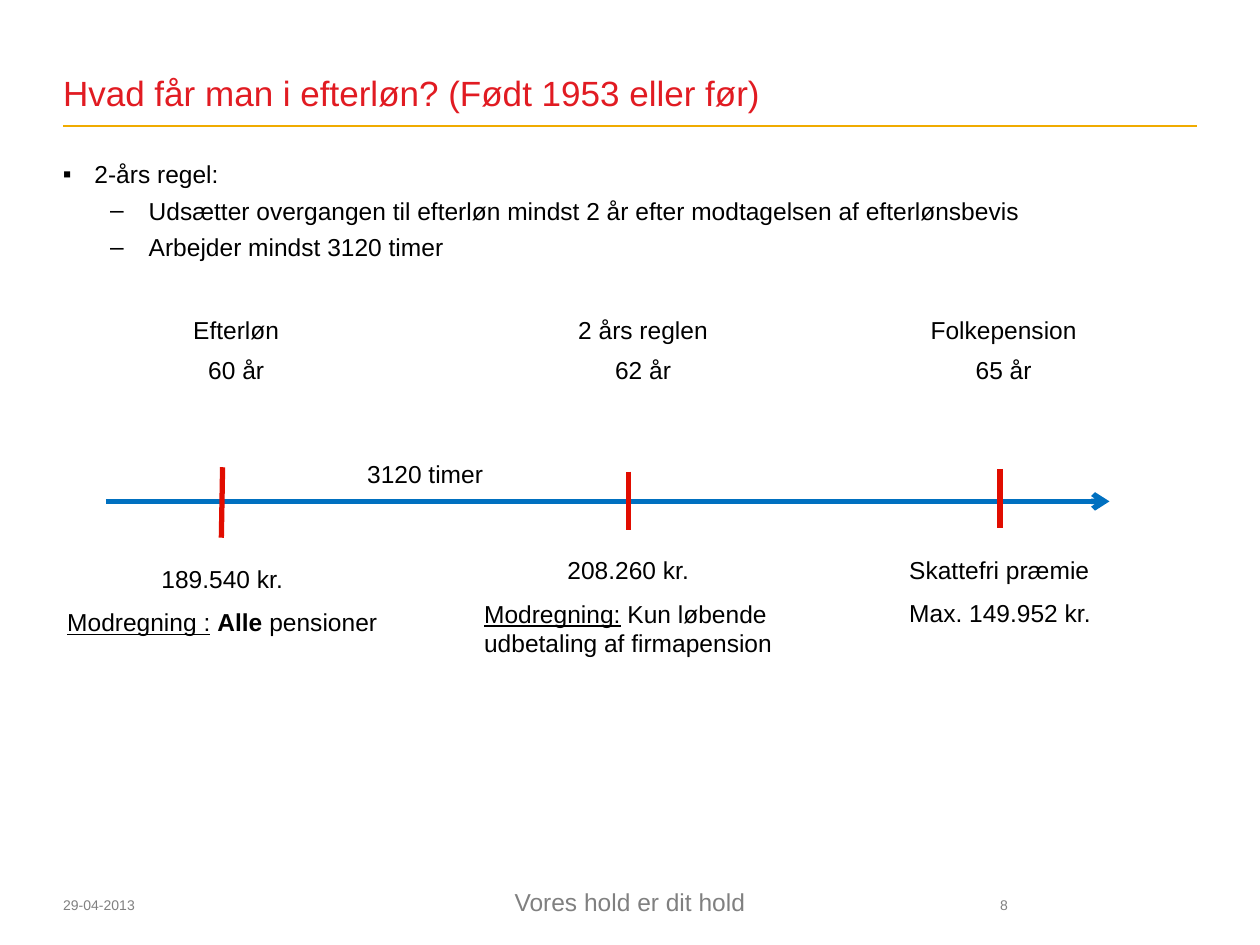
from dataclasses import dataclass
from typing import NamedTuple

from lxml.etree import SubElement
from pptx import Presentation
from pptx.dml.color import RGBColor
from pptx.enum.shapes import MSO_CONNECTOR as Connector
from pptx.enum.text import MSO_ANCHOR as Anchor, MSO_AUTO_SIZE as AutoSize, PP_ALIGN as Align
from pptx.oxml.ns import qn
from pptx.util import Pt


@dataclass(frozen=True)
class Theme:
    font: str = "Arial"
    title_size: float = 20
    text_size: float = 14
    small_size: float = 8
    title: str = "E11B22"
    text: str = "000000"
    muted: str = "808080"
    rule: str = "F0AB00"
    axis: str = "0070C0"
    tick: str = "E10D00"


THEME = Theme()


class Frame(NamedTuple):
    left: float
    top: float
    width: float
    height: float


class Span(NamedTuple):
    text: str
    underline: bool = False
    bold: bool = False


class Line(NamedTuple):
    spans: tuple
    align: Align = Align.CENTER


class Label(NamedTuple):
    frame: Frame
    lines: tuple
    space_before: float = 8
    left_inset: float = 3
    centre_block: bool = False


class Bullet(NamedTuple):
    text: str
    mark: str
    level: int
    margin: float
    hanging: float


class Segment(NamedTuple):
    start: tuple
    end: tuple
    color: str
    width: float = 3
    arrow: bool = False


def line(text, align=Align.CENTER):
    return Line((Span(text),), align)


LABELS = (
    Label(Frame(56, 180, 141, 40), (line("Efterløn"), line("60 år")), 6, 20),
    Label(Frame(283, 180, 152, 40), (line("2 års reglen"), line("62 år")), 6, 20),
    Label(Frame(524, 180, 95, 40), (line("Folkepension"), line("65 år")), 6, 7),
    Label(Frame(156, 262, 174, 17), (line("3120 timer"),)),
    Label(Frame(33, 317, 188, 52), (
        line("189.540 kr."),
        Line((Span("Modregning :", underline=True), Span(" "),
              Span("Alle ", bold=True), Span("pensioner"))))),
    Label(Frame(258, 317, 202, 59), (
        line("208.260 kr."),
        Line((Span("Modregning:", underline=True),
              Span(" Kun løbende udbetaling af firmapension")), Align.LEFT)),
        centre_block=True),
    Label(Frame(484.5, 317, 174, 42), (
        line("Skattefri præmie", Align.LEFT), line("Max. 149.952 kr.", Align.LEFT)),
        centre_block=True),
)

BULLETS = (
    Bullet("2-års regel:", "▪", 0, 18, 18),
    Bullet("Udsætter overgangen til efterløn mindst 2 år efter modtagelsen af efterlønsbevis",
           "–", 1, 49, 22),
    Bullet("Arbejder mindst 3120 timer", "–", 1, 49, 22),
)

SEGMENTS = (
    Segment((36, 72), (684, 72), THEME.rule, 0.75),
    Segment((60.5, 286.5), (634, 286.5), THEME.axis, arrow=True),
    Segment((127.2, 267), (126.5, 307.3), THEME.tick),
    Segment((359.2, 269.5), (359.2, 303), THEME.tick),
    Segment((571.5, 268), (571.5, 301.5), THEME.tick),
)


def set_font(font, size: float, color: str) -> None:
    font.name = THEME.font
    font.size = Pt(size)
    font.color.rgb = RGBColor.from_string(color)


def place(shape, frame: Frame) -> None:
    shape.left, shape.top, shape.width, shape.height = map(Pt, frame)


def prepare(text, anchor: Anchor, side: float = 0, wrap: bool = True) -> None:
    text.auto_size = AutoSize.NONE
    text.word_wrap = wrap
    text.vertical_anchor = anchor
    text.margin_left = text.margin_right = Pt(side)
    text.margin_top = text.margin_bottom = Pt(0)


def paragraphs(text, count: int):
    yield text.paragraphs[0]
    for _ in range(count - 1):
        yield text.add_paragraph()


def add_segment(page, segment: Segment) -> None:
    connector = page.shapes.add_connector(
        Connector.STRAIGHT, *map(Pt, segment.start + segment.end))
    connector.line.color.rgb = RGBColor.from_string(segment.color)
    connector.line.width = Pt(segment.width)
    if segment.arrow:
        SubElement(connector.line._get_or_add_ln(), qn("a:tailEnd"), type="arrow")
    SubElement(connector._element.spPr, qn("a:effectLst"))


def add_label(page, label: Label) -> None:
    box = page.shapes.add_textbox(*map(Pt, label.frame))
    text = box.text_frame
    prepare(text, Anchor.MIDDLE, 3)
    text.margin_left = Pt(label.left_inset)
    if label.centre_block:
        text._txBody.bodyPr.set("anchorCtr", "1")
    for index, para in enumerate(paragraphs(text, len(label.lines))):
        para.alignment = label.lines[index].align
        para.space_before = Pt(label.space_before if index else 0)
        set_font(para.font, THEME.text_size, THEME.text)
        for span in label.lines[index].spans:
            run = para.add_run()
            run.text = span.text
            if span.underline:
                run.font.underline = True
            if span.bold:
                run.font.bold = True


def add_bullets(page, frame: Frame) -> None:
    box = page.shapes.add_textbox(*map(Pt, frame))
    prepare(box.text_frame, Anchor.TOP)
    for bullet, para in zip(BULLETS, paragraphs(box.text_frame, len(BULLETS))):
        para.text = bullet.text
        para.level = bullet.level
        para.space_before = Pt(4 if bullet.level else 0)
        properties = para._p.get_or_add_pPr()
        properties.set("marL", str(Pt(bullet.margin)))
        properties.set("indent", str(-Pt(bullet.hanging)))
        SubElement(properties, qn("a:buFont"), typeface=THEME.font)
        SubElement(properties, qn("a:buChar"), char=bullet.mark)
        set_font(para.font, THEME.text_size, THEME.text)


def add_footer(page, frame: Frame, words: str, size: float, align: Align, anchor: Anchor) -> None:
    box = page.shapes.add_textbox(*map(Pt, frame))
    prepare(box.text_frame, anchor, wrap=False)
    para = box.text_frame.paragraphs[0]
    para.text = words
    para.alignment = align
    set_font(para.font, size, THEME.muted)


def set_title(page, words: str) -> None:
    title = page.shapes.title
    place(title, Frame(36, 24, 648, 41))
    prepare(title.text_frame, Anchor.BOTTOM)
    para = title.text_frame.paragraphs[0]
    para.text = words
    para.alignment = Align.LEFT
    set_font(para.font, THEME.title_size, THEME.title)


def main() -> None:
    deck = Presentation()
    deck.slide_width, deck.slide_height = Pt(720), Pt(540)
    page = deck.slides.add_slide(deck.slide_layouts[5])
    set_title(page, "Hvad får man i efterløn? (Født 1953 eller før)")
    add_bullets(page, Frame(36, 91, 648, 389))
    for segment in SEGMENTS:
        add_segment(page, segment)
    for label in LABELS:
        add_label(page, label)
    add_footer(page, Frame(36, 498, 65, 24), "29-04-2013",
               THEME.small_size, Align.LEFT, Anchor.BOTTOM)
    add_footer(page, Frame(286.5, 503.5, 147, 24), "Vores hold er dit hold",
               THEME.text_size, Align.CENTER, Anchor.MIDDLE)
    add_footer(page, Frame(553, 498, 23, 24), "8",
               THEME.small_size, Align.RIGHT, Anchor.BOTTOM)
    deck.save("out.pptx")


if __name__ == "__main__":
    main()
